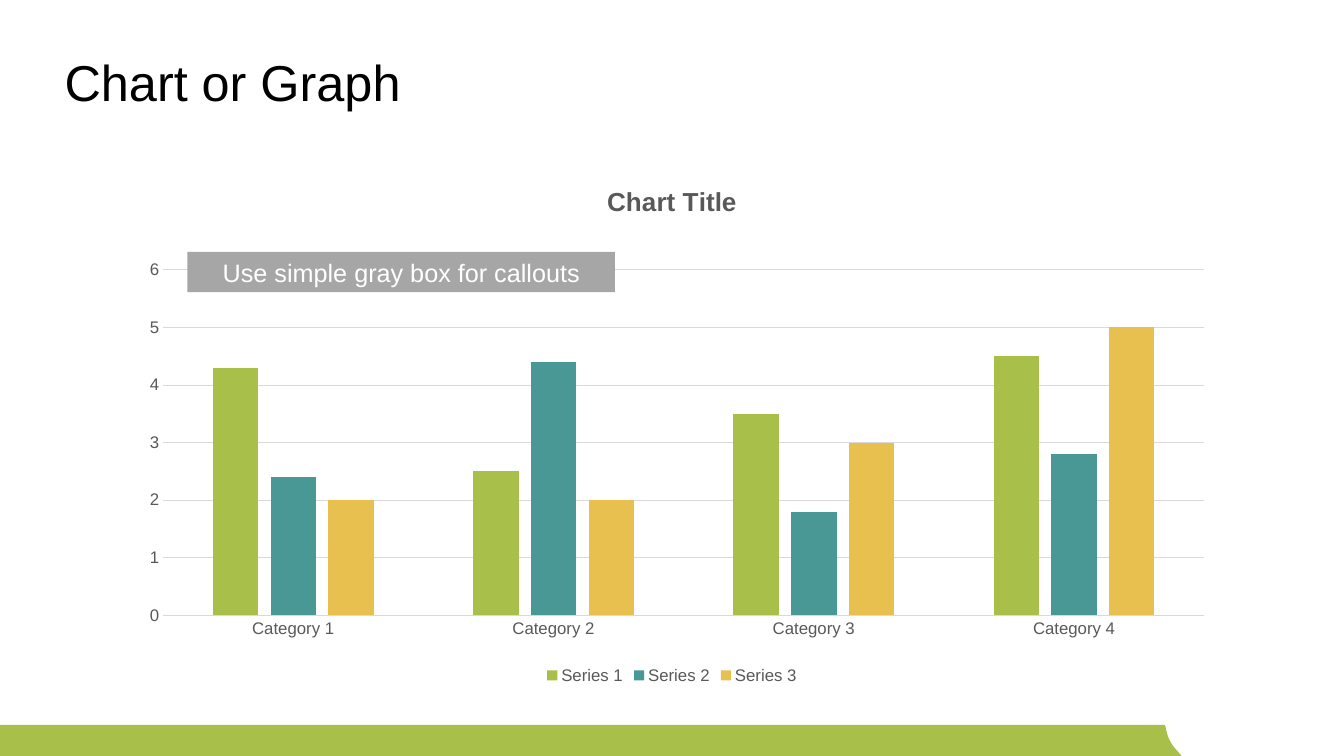
"""Build a slide with a clustered column chart, a gray callout and a green footer."""
from pptx import Presentation
from pptx.chart.data import CategoryChartData
from pptx.dml.color import RGBColor
from pptx.enum.chart import XL_CHART_TYPE as ChartType, XL_LEGEND_POSITION as LegendPosition
from pptx.enum.chart import XL_TICK_MARK as TickMark
from pptx.enum.shapes import MSO_SHAPE as Shape
from pptx.enum.text import MSO_ANCHOR as Anchor, PP_ALIGN as Align
from pptx.oxml import parse_xml
from pptx.oxml.ns import nsdecls, qn
from pptx.util import Inches, Pt

COLORS = {
    "green": "A8BF49", "teal": "499896", "gold": "E8C04F", "callout": "A6A6A6",
    "label": "595959", "grid": "D9D9D9", "black": "000000", "white": "FFFFFF",
}
SERIES = [
    ("Series 1", "green", (4.3, 2.5, 3.5, 4.5)),
    ("Series 2", "teal", (2.4, 4.4, 1.8, 2.8)),
    ("Series 3", "gold", (2, 2, 3, 5)),
]
PLOT_LAYOUT = {"x": 0.088, "y": 0.203, "w": 0.843, "h": 0.658}


def color(name):
    return RGBColor.from_string(COLORS[name])


def set_font(font, size, color_name):
    font.name = "Arial"
    font.size = Pt(size)
    font.color.rgb = color(color_name)


presentation = Presentation()
presentation.slide_width = Inches(13.33)
presentation.slide_height = Inches(7.5)
slide = presentation.slides.add_slide(presentation.slide_layouts[5])

curve_points = [(11.56, 7.21), (11.57, 7.28), (11.6, 7.36), (11.65, 7.42)]
curve = []
for step in range(9):
    t = step / 8
    weights = [(1 - t) ** 3, 3 * t * (1 - t) ** 2, 3 * t ** 2 * (1 - t), t ** 3]
    curve.append([sum(w * point[axis] for w, point in zip(weights, curve_points)) for axis in (0, 1)])
outline = [(11.55, 7.19), *curve, (11.72, 7.5), (0, 7.5)]
builder = slide.shapes.build_freeform(Inches(0), Inches(7.19))
builder.add_line_segments([(Inches(x), Inches(y)) for x, y in outline], close=True)
footer = builder.convert_to_shape()
footer.shadow.inherit = False
footer.fill.solid()
footer.fill.fore_color.rgb = color("green")
footer.line.fill.background()

title = slide.shapes.title
title.left, title.top, title.width, title.height = map(Inches, (0.54, 0.5, 12.25, 0.7))
title.text_frame.text = "Chart or Graph"
title.text_frame.vertical_anchor = Anchor.MIDDLE
paragraph = title.text_frame.paragraphs[0]
paragraph.alignment = Align.LEFT
paragraph.line_spacing = 0.9
set_font(paragraph.font, 36, "black")

chart_data = CategoryChartData()
chart_data.categories = [f"Category {number}" for number in range(1, 5)]
for name, _, values in SERIES:
    chart_data.add_series(name, values)
chart = slide.shapes.add_chart(
    ChartType.COLUMN_CLUSTERED, Inches(0.54), Inches(1.62), Inches(12.25), Inches(5.21), chart_data
).chart
set_font(chart.font, 10, "black")

chart.has_title = True
chart.chart_title.include_in_layout = False
chart.chart_title.text_frame.text = "Chart Title"
title_font = chart.chart_title.text_frame.paragraphs[0].font
set_font(title_font, 18.6, "label")
title_font.bold = True

chart.has_legend = True
chart.legend.position = LegendPosition.BOTTOM
chart.legend.include_in_layout = False
set_font(chart.legend.font, 12, "label")

plot = chart.plots[0]
plot.gap_width = 219
plot.overlap = -27
plot.vary_by_categories = False
for series, (_, color_name, _) in zip(plot.series, SERIES):
    series.format.fill.solid()
    series.format.fill.fore_color.rgb = color(color_name)

category_axis, value_axis = chart.category_axis, chart.value_axis
for axis in (category_axis, value_axis):
    axis.major_tick_mark = axis.minor_tick_mark = TickMark.NONE
    set_font(axis.tick_labels.font, 12, "label")
value_axis.minimum_scale, value_axis.maximum_scale, value_axis.major_unit = 0, 6, 1
value_axis.has_major_gridlines = True
value_axis.format.line.fill.background()
for line in (category_axis.format.line, value_axis.major_gridlines.format.line):
    line.color.rgb = color("grid")
    line.width = Pt(0.75)

plot_area = chart.element.find(".//" + qn("c:plotArea"))
for layout in plot_area.findall(qn("c:layout")):
    plot_area.remove(layout)
modes = '<c:xMode val="edge"/><c:yMode val="edge"/>'
sizes = "".join(f'<c:{key} val="{value}"/>' for key, value in PLOT_LAYOUT.items())
plot_area.insert(0, parse_xml(
    f'<c:layout {nsdecls("c")}><c:manualLayout><c:layoutTarget val="inner"/>'
    f"{modes}{sizes}</c:manualLayout></c:layout>"
))

callout = slide.shapes.add_shape(Shape.RECTANGLE, Inches(1.86), Inches(2.5), Inches(4.24), Inches(0.4))
callout.shadow.inherit = False
callout.fill.solid()
callout.fill.fore_color.rgb = color("callout")
callout.line.fill.background()
callout.text_frame.text = "Use simple gray box for callouts"
callout.text_frame.word_wrap = False
callout.text_frame.vertical_anchor = Anchor.MIDDLE
paragraph = callout.text_frame.paragraphs[0]
paragraph.alignment = Align.CENTER
set_font(paragraph.font, 18, "white")

presentation.save("out.pptx")
